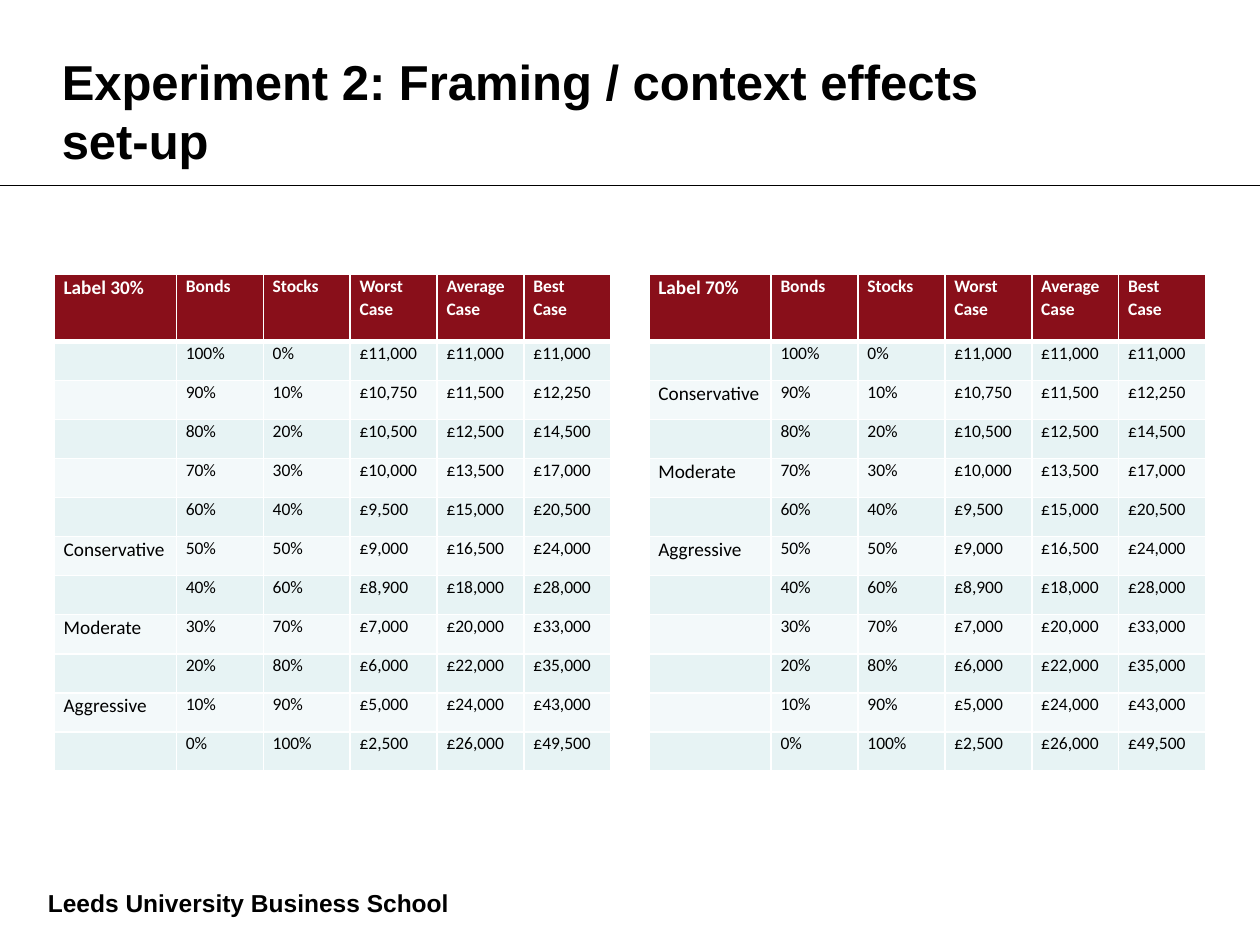
from lxml import etree
from pptx import Presentation
from pptx import util as u
from pptx.dml.color import RGBColor
from pptx.enum import shapes, text
from pptx.oxml.ns import qn

WIDTH, HEIGHT = u.Inches(10), u.Inches(7.5)

CASES = [
    ("£11,000", "£11,000", "£11,000"),
    ("£10,750", "£11,500", "£12,250"),
    ("£10,500", "£12,500", "£14,500"),
    ("£10,000", "£13,500", "£17,000"),
    ("£9,500", "£15,000", "£20,500"),
    ("£9,000", "£16,500", "£24,000"),
    ("£8,900", "£18,000", "£28,000"),
    ("£7,000", "£20,000", "£33,000"),
    ("£6,000", "£22,000", "£35,000"),
    ("£5,000", "£24,000", "£43,000"),
    ("£2,500", "£26,000", "£49,500"),
]
HEADINGS = ["Bonds", "Stocks", "Worst Case", "Average Case", "Best Case"]
FRAMINGS = [
    ("Label 30%", 0.43, {50: "Conservative", 70: "Moderate", 90: "Aggressive"}),
    ("Label 70%", 5.15, {10: "Conservative", 30: "Moderate", 50: "Aggressive"}),
]


def colour(hex_code):
    return RGBColor.from_string(hex_code)


def portfolio_rows(heading, labels):
    rows = [[heading, *HEADINGS]]
    for step, outcomes in enumerate(CASES):
        stocks = step * 10
        rows.append([labels.get(stocks, ""), f"{100 - stocks}%", f"{stocks}%", *outcomes])
    return rows


class SlideBuilder:
    ink, paper, header = "000000", "FFFFFF", "890F1A"
    bands = ("F3F9FA", "E7F3F4")
    heading_font, table_font = "Arial", "Calibri"
    label_width, value_width = u.Inches(0.97), u.Inches(0.69)
    header_height, row_height = u.Inches(0.53), u.Inches(0.31)
    cell_margin = u.Pt(5.4)

    def __init__(self, slide):
        self.slide = slide

    def format_runs(self, paragraph, font, size, hex_code, bold):
        for run in paragraph.runs:
            run.font.name, run.font.size, run.font.bold = font, u.Pt(size), bold
            run.font.color.rgb = colour(hex_code)

    def title(self, wording, left, top, width, height):
        heading = self.slide.shapes.title
        heading.left, heading.top = int(WIDTH * left), int(HEIGHT * top)
        heading.width, heading.height = int(WIDTH * width), int(HEIGHT * height)
        frame = heading.text_frame
        frame.text = wording
        frame.word_wrap = True
        frame.auto_size = text.MSO_AUTO_SIZE.NONE
        frame.vertical_anchor = text.MSO_ANCHOR.TOP
        frame.paragraphs[0].alignment = text.PP_ALIGN.LEFT
        self.format_runs(frame.paragraphs[0], self.heading_font, 28, self.ink, True)

    def rule(self, height_share):
        level = int(HEIGHT * height_share)
        divider = self.slide.shapes.add_connector(
            shapes.MSO_CONNECTOR.STRAIGHT, 0, level, WIDTH, level)
        divider.line.color.rgb = colour(self.ink)
        divider.line.width = u.Pt(0.75)
        etree.SubElement(divider._element.spPr, qn("a:effectLst"))

    def footer(self, wording, left, top, width, height):
        school = self.slide.shapes.add_textbox(
            int(WIDTH * left), int(HEIGHT * top), int(WIDTH * width), int(HEIGHT * height))
        frame = school.text_frame
        frame.word_wrap = True
        frame.margin_left = frame.margin_right = frame.margin_top = 0
        frame.margin_bottom = u.Inches(0.04)
        frame.vertical_anchor = text.MSO_ANCHOR.BOTTOM
        frame.text = wording
        self.format_runs(frame.paragraphs[0], self.heading_font, 14, self.ink, True)

    def borders(self, cell, row):
        properties = cell._tc.get_or_add_tcPr()
        weights = {"lnL": 1, "lnR": 1, "lnT": 3 if row == 1 else 1, "lnB": 3 if row == 0 else 1}
        for position, (side, points) in enumerate(weights.items()):
            edge = etree.Element(qn(f"a:{side}"), w=str(u.Pt(points)))
            fill = etree.SubElement(edge, qn("a:solidFill"))
            etree.SubElement(fill, qn("a:srgbClr"), val=self.paper)
            properties.insert(position, edge)

    def cell(self, cell, wording, row, column):
        is_header = row == 0
        size = 11 if column == 0 else 10
        cell.margin_left = cell.margin_right = self.cell_margin
        cell.margin_top = cell.margin_bottom = 0
        cell.fill.solid()
        cell.fill.fore_color.rgb = colour(self.header if is_header else self.bands[row % 2])
        self.borders(cell, row)
        paragraph = cell.text_frame.paragraphs[0]
        paragraph.text = wording
        paragraph.line_spacing = 1.07
        self.format_runs(paragraph, self.table_font, size,
                         self.paper if is_header else self.ink, is_header)
        if not wording:
            etree.SubElement(paragraph._p, qn("a:endParaRPr"), sz=str(size * 100))

    def table(self, rows, left, top):
        column_widths = [self.label_width] + [self.value_width] * len(HEADINGS)
        row_heights = [self.header_height] + [self.row_height] * len(CASES)
        table = self.slide.shapes.add_table(
            len(rows), len(column_widths), int(WIDTH * left), int(HEIGHT * top),
            sum(column_widths), sum(row_heights)).table
        table.horz_banding = False
        for column, width in zip(table.columns, column_widths):
            column.width = width
        for row, height in zip(table.rows, row_heights):
            row.height = height
        for row, values in enumerate(rows):
            for column, wording in enumerate(values):
                self.cell(table.cell(row, column), wording, row, column)


def main():
    deck = Presentation()
    deck.slide_width, deck.slide_height = WIDTH, HEIGHT
    builder = SlideBuilder(deck.slides.add_slide(deck.slide_layouts[5]))
    builder.rule(1.47 / 7.5)
    builder.footer("Leeds University Business School", 0.38 / 10, 6.51 / 7.5, 5.33 / 10, 0.81 / 7.5)
    for heading, left, labels in FRAMINGS:
        builder.table(portfolio_rows(heading, labels), left / 10, 2.18 / 7.5)
    builder.title("Experiment 2: Framing / context effects\vset-up",
                  0.39 / 10, 0.36 / 7.5, 9.22 / 10, 0.71 / 7.5)
    deck.save("out.pptx")


if __name__ == "__main__":
    main()
